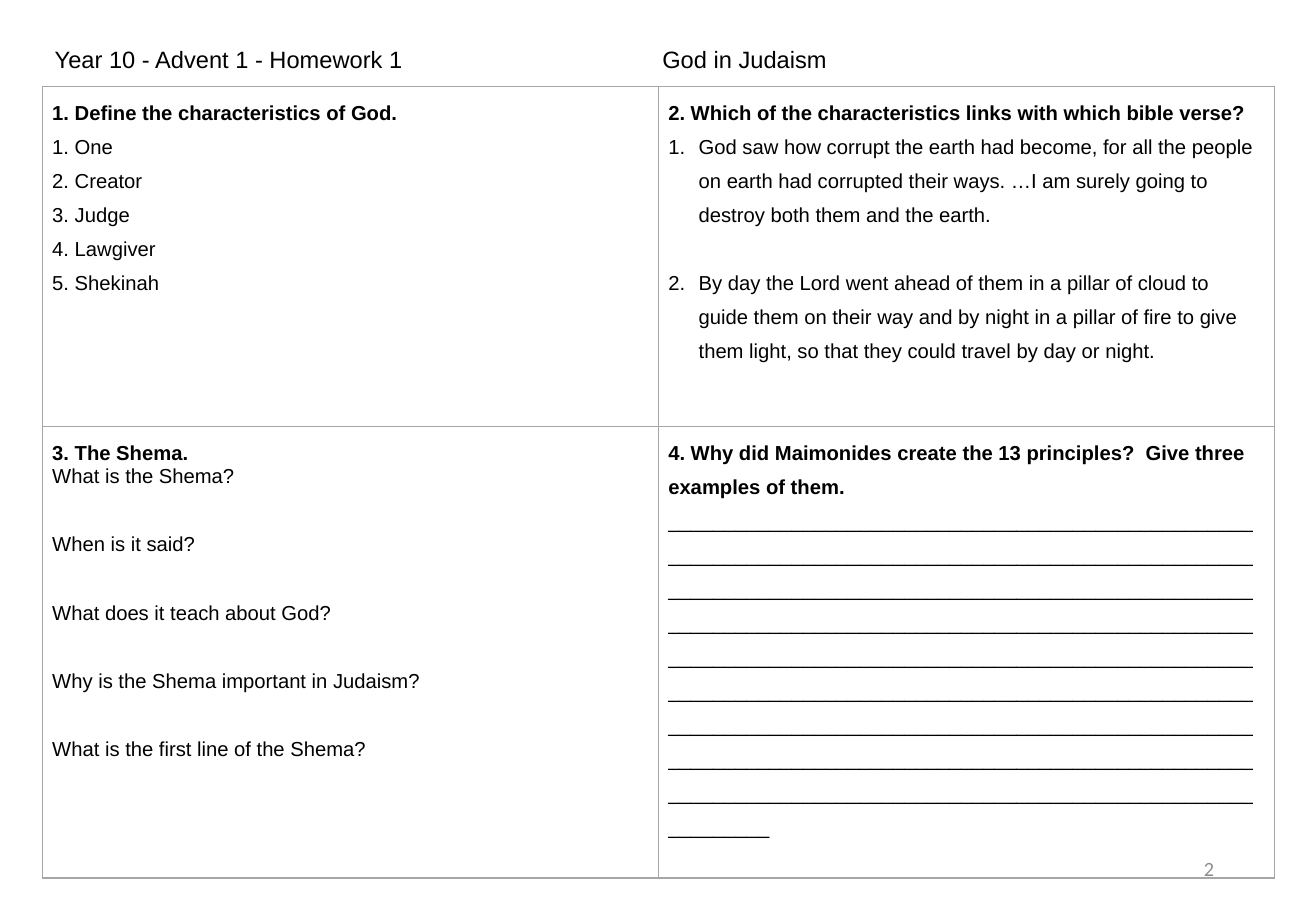
from pptx import Presentation
from pptx.dml.color import RGBColor
from pptx.enum.text import MSO_ANCHOR, MSO_AUTO_SIZE, PP_ALIGN
from pptx.oxml.ns import qn
from pptx.util import Inches, Pt
from lxml.etree import SubElement

BLACK = RGBColor(0x00, 0x00, 0x00)
WHITE = RGBColor(0xFF, 0xFF, 0xFF)
NUMBER_GREY = RGBColor(0x8C, 0x8C, 0x8C)
BORDER_GREY = RGBColor(0xA6, 0xA6, 0xA6)

VERSES = [
    "God saw how corrupt the earth had become, for all the people on earth had corrupted "
    "their ways. …I am surely going to destroy both them and the earth.",
    "By day the Lord went ahead of them in a pillar of cloud to guide them on their way and "
    "by night in a pillar of fire to give them light, so that they could travel by day or night.",
]
CHARACTERISTICS = ["1. One", "2. Creator", "3. Judge", "4. Lawgiver", "5. Shekinah"]
SHEMA_QUESTIONS = [
    "What is the Shema?",
    "When is it said?",
    "What does it teach about God?",
    "Why is the Shema important in Judaism?",
    "What is the first line of the Shema?",
]
ANSWER_LINES = "_" * 477

# One entry per cell: heading, lines, line spacing, gap between lines (points), numbered
TASKS = [
    [
        ("1. Define the characteristics of God.", CHARACTERISTICS, 1.5, 0, False),
        ("2. Which of the characteristics links with which bible verse?", VERSES, 1.5, 20.2, True),
    ],
    [
        ("3. The Shema.", SHEMA_QUESTIONS, 1.0, 27, False),
        ("4. Why did Maimonides create the 13 principles?  Give three examples of them.",
         [ANSWER_LINES], 1.5, 0, False),
    ],
]


def format_para(para, size, spacing=1.0, bold=False, color=BLACK, font="Arial"):
    para.line_spacing = spacing
    for span in para.runs:
        span.font.name = font
        span.font.size = Pt(size)
        span.font.bold = bold
        span.font.color.rgb = color


def number_para(para):
    props = para._p.get_or_add_pPr()
    props.set("marL", str(Inches(0.25)))
    props.set("indent", str(-Inches(0.25)))
    SubElement(props, qn("a:buFont"), typeface="+mj-lt")
    SubElement(props, qn("a:buAutoNum"), type="arabicPeriod")


def add_heading(page):
    title = page.shapes.title
    title.left, title.top = Inches(0.35), Inches(0.2)
    title.width, title.height = Inches(10.36), Inches(0.38)
    title.fill.solid()
    title.fill.fore_color.rgb = WHITE
    frame = title.text_frame
    frame.text = "Year 10 - Advent 1 - Homework 1\tGod in Judaism"
    frame.vertical_anchor = MSO_ANCHOR.TOP
    frame.auto_size = MSO_AUTO_SIZE.NONE
    para = frame.paragraphs[0]
    para.alignment = PP_ALIGN.LEFT
    para.space_before = Pt(0)
    format_para(para, 14, spacing=1.5)
    tabs = SubElement(para._p.get_or_add_pPr(), qn("a:tabLst"))
    SubElement(tabs, qn("a:tab"), pos=str(Inches(5)), algn="l")


def add_page_number(page):
    box = page.shapes.add_textbox(Inches(7.65), Inches(6.95), Inches(2.44), Inches(0.4))
    frame = box.text_frame
    frame.word_wrap = True
    frame.vertical_anchor = MSO_ANCHOR.MIDDLE
    frame.text = "2"
    para = frame.paragraphs[0]
    para.alignment = PP_ALIGN.RIGHT
    format_para(para, 12, color=NUMBER_GREY, font="Calibri")


def add_borders(cell):
    props = cell._tc.get_or_add_tcPr()
    for side in ("a:lnL", "a:lnR", "a:lnT", "a:lnB"):
        line = SubElement(props, qn(side), w=str(Pt(1)))
        fill = SubElement(line, qn("a:solidFill"))
        SubElement(fill, qn("a:srgbClr"), val=str(BORDER_GREY))


def fill_cell(cell, heading, lines, spacing, gap, numbered):
    cell.margin_left = cell.margin_right = Inches(0.08)
    cell.margin_top = cell.margin_bottom = Inches(0.04)
    add_borders(cell)
    cell.fill.background()
    frame = cell.text_frame
    frame.text = heading
    format_para(frame.paragraphs[0], 12, spacing=1.5, bold=True)
    for index, line in enumerate(lines):
        para = frame.add_paragraph()
        para.text = line
        format_para(para, 12, spacing=spacing)
        para.space_before = Pt(gap if index else 0)
        if numbered:
            number_para(para)


def add_task_table(page):
    frame = page.shapes.add_table(2, 2, Inches(0.35), Inches(0.71), Inches(10.14), Inches(6.52))
    table = frame.table
    table.first_row = table.horz_banding = False
    for row, height in zip(table.rows, (2.8, 3.72)):
        row.height = Inches(height)
    for row, tasks in zip(table.rows, TASKS):
        for cell, task in zip(row.cells, tasks):
            fill_cell(cell, *task)


def main():
    deck = Presentation()
    deck.slide_width, deck.slide_height = Inches(10.83), Inches(7.5)
    page = deck.slides.add_slide(deck.slide_layouts[5])

    # Heading and page number
    add_heading(page)
    add_page_number(page)

    # Four homework tasks
    add_task_table(page)

    deck.save("out.pptx")


if __name__ == "__main__":
    main()
